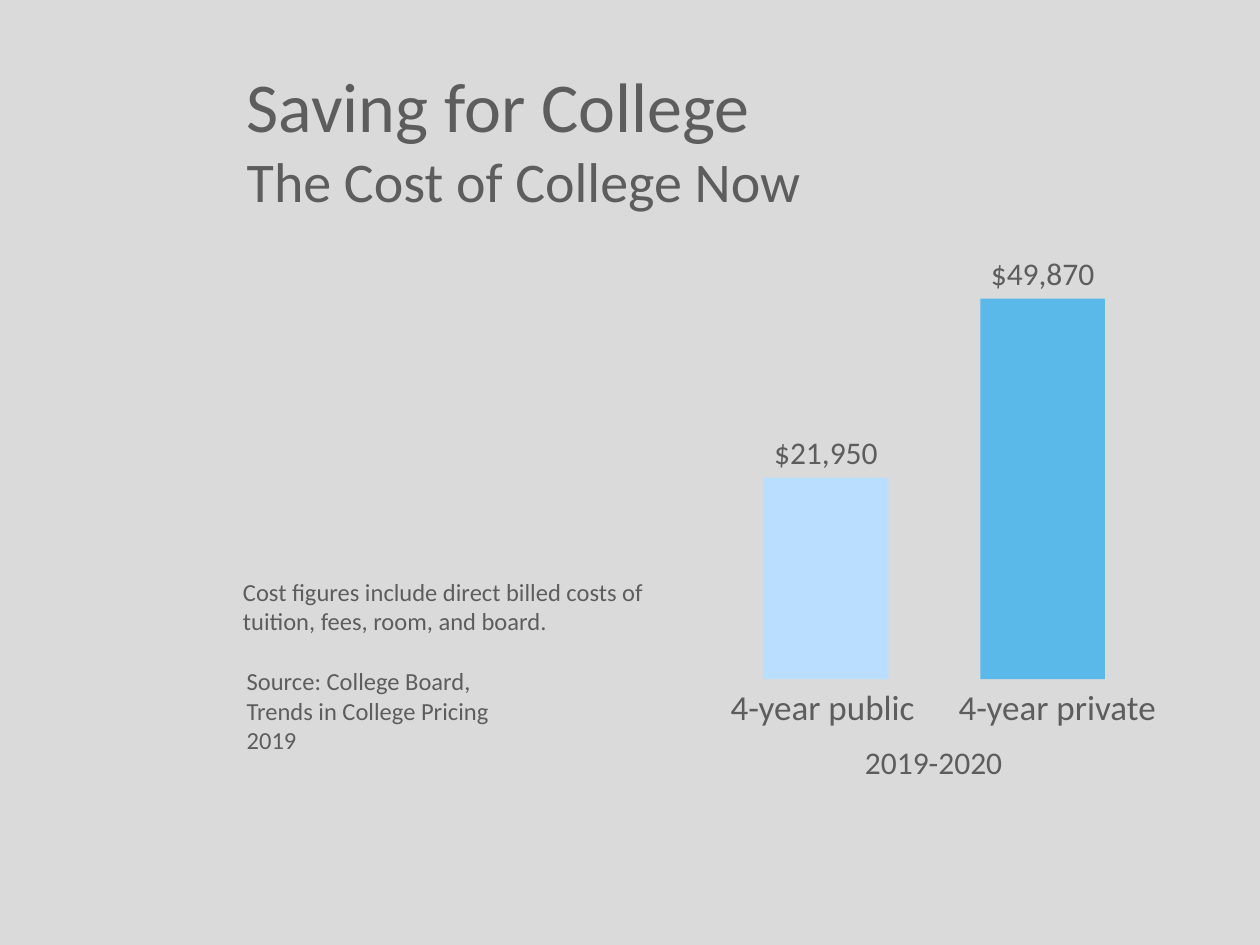
from pptx import Presentation
from pptx.dml.color import RGBColor
from pptx.enum.shapes import MSO_SHAPE
from pptx.enum.text import MSO_ANCHOR, PP_ALIGN
from pptx.util import Inches, Pt

FONT, INK, BACKGROUND = "Calibri", "5D5D5D", "DADADA"

TITLE = "Saving for College\vThe Cost of College Now"
COST_NOTE = "Cost figures include direct billed costs of tuition, fees, room, and board."
SOURCE = "Source: College Board, Trends in College Pricing 2019"
PERIOD = "2019-2020"

# category, cost, bar left, bar height, bar colour, category left and width
COLLEGES = [
    ("4-year public", "$21,950", 6.06, 1.6, "BADEFF", 5.7, 1.72),
    ("4-year private", "$49,870", 7.78, 3.02, "5BB9EA", 7.51, 1.96),
]
BAR_WIDTH, BASELINE = 0.99, 5.39
COST_WIDTH, COST_HEIGHT = 1.08, 0.4


def color(hex_code):
    return RGBColor.from_string(hex_code)


def add_text(slide, text, box, sizes, align=PP_ALIGN.LEFT, spacing=None,
             anchor=MSO_ANCHOR.TOP):
    """Place one paragraph; sizes holds one point size per line."""
    frame = slide.shapes.add_textbox(*map(Inches, box)).text_frame
    frame.word_wrap = True
    frame.vertical_anchor = anchor
    paragraph = frame.paragraphs[0]
    paragraph.text = text
    paragraph.alignment = align
    paragraph.line_spacing = spacing
    for run, size in zip(paragraph.runs, sizes):
        run.font.name = FONT
        run.font.size = Pt(size)
        run.font.color.rgb = color(INK)


def add_bar(slide, left, height, fill):
    box = (left, BASELINE - height, BAR_WIDTH, height)
    bar = slide.shapes.add_shape(MSO_SHAPE.RECTANGLE, *map(Inches, box))
    bar.shadow.inherit = False
    bar.fill.solid()
    bar.fill.fore_color.rgb = color(fill)
    bar.line.fill.background()


def main():
    deck = Presentation()
    deck.slide_width, deck.slide_height = Inches(10), Inches(7.5)
    slide = deck.slides.add_slide(deck.slide_layouts[6])
    slide.background.fill.solid()
    slide.background.fill.fore_color.rgb = color(BACKGROUND)

    add_text(slide, TITLE, (1.86, 0.43, 7.99, 1.33), [40, 32],
             anchor=MSO_ANCHOR.MIDDLE)
    add_text(slide, COST_NOTE, (1.83, 4.53, 3.87, 0.57), [14])
    add_text(slide, SOURCE, (1.86, 5.24, 2.3, 0.81), [14])
    add_text(slide, PERIOD, (6.19, 5.85, 2.44, 0.4), [18], PP_ALIGN.CENTER)

    for category, cost, left, height, fill, category_left, category_width in COLLEGES:
        add_bar(slide, left, height, fill)
        cost_left = left + (BAR_WIDTH - COST_WIDTH) / 2
        cost_top = BASELINE - height - COST_HEIGHT
        add_text(slide, cost, (cost_left, cost_top, COST_WIDTH, COST_HEIGHT),
                 [18], PP_ALIGN.CENTER)
        add_text(slide, category, (category_left, 5.47, category_width, 0.35),
                 [20], spacing=0.75)

    deck.save("out.pptx")


if __name__ == "__main__":
    main()
